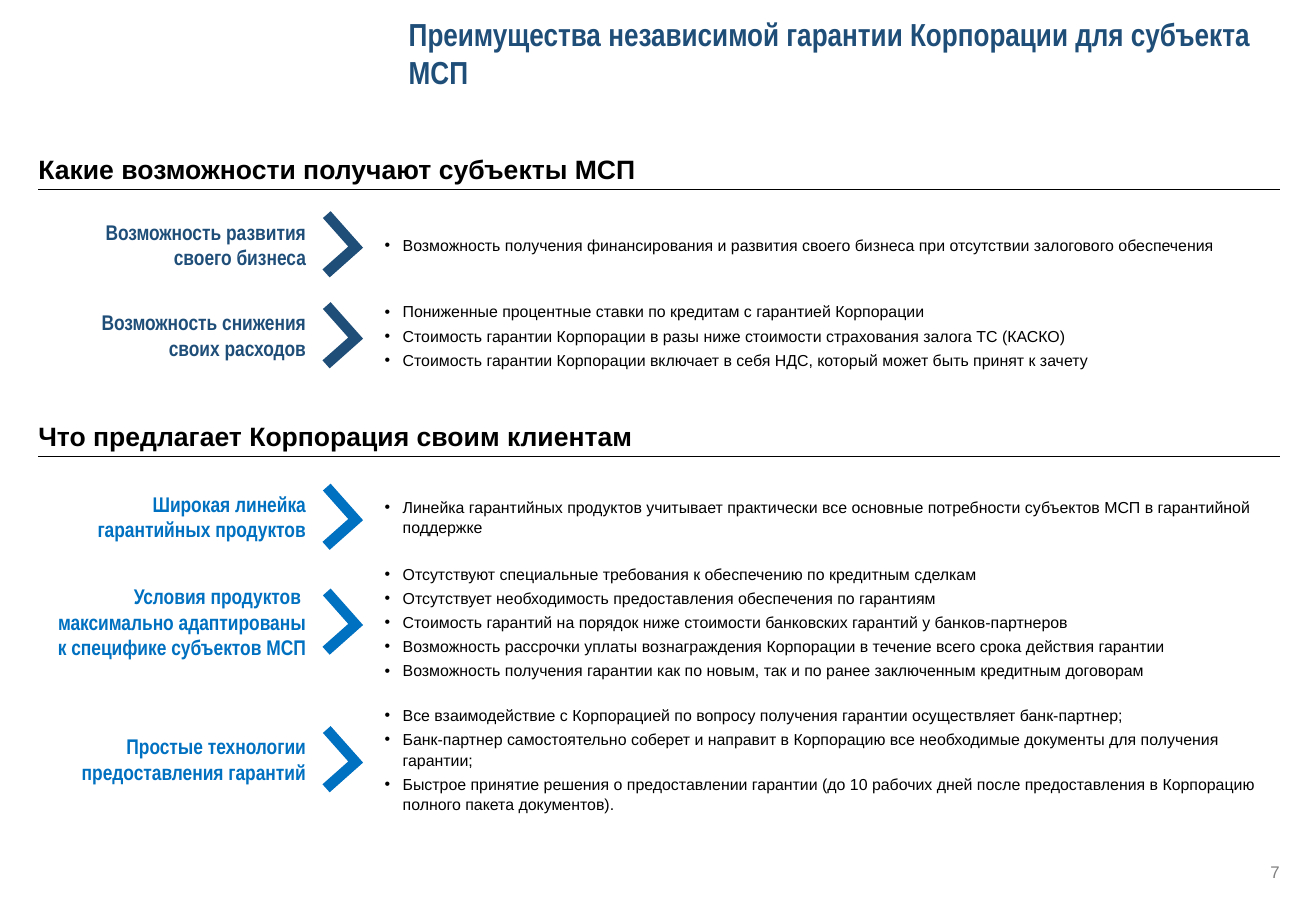
from lxml import etree
from pptx import Presentation
from pptx.dml.color import RGBColor
from pptx.enum.shapes import MSO_CONNECTOR, MSO_SHAPE
from pptx.enum.text import MSO_ANCHOR, MSO_AUTO_SIZE, PP_ALIGN
from pptx.oxml.ns import qn
from pptx.util import Cm, Pt

NAVY = RGBColor(0x1F, 0x4E, 0x79)
BLUE = RGBColor(0x00, 0x70, 0xC0)
BLACK = RGBColor(0, 0, 0)
GRAY = RGBColor(0x80, 0x80, 0x80)

TITLE = "Преимущества независимой гарантии Корпорации для субъекта МСП"
PAGE_NUMBER = "7"

# Section: heading, rule height in cm, colour, rows.
# Row: centre in cm, bullet box height in cm, label paragraphs, bullets.
SECTIONS = [
    ("Какие возможности получают субъекты МСП", 5.05, NAVY, [
        (6.5, 1.88, ["Возможность развития своего бизнеса"], [
            "Возможность получения финансирования и развития своего бизнеса при отсутствии залогового обеспечения",
        ]),
        (8.92, 1.88, ["Возможность снижения своих расходов"], [
            "Пониженные процентные ставки по кредитам с гарантией Корпорации",
            "Стоимость гарантии Корпорации в разы ниже стоимости страхования залога ТС (КАСКО)",
            "Стоимость гарантии Корпорации включает в себя НДС, который может быть принят к зачету",
        ]),
    ]),
    ("Что предлагает Корпорация своим клиентам", 12.14, BLUE, [
        (13.75, 1.88, ["Широкая линейка гарантийных продуктов"], [
            "Линейка гарантийных продуктов учитывает практически все основные потребности субъектов МСП в гарантийной поддержке",
        ]),
        (16.54, 3.25, ["Условия продуктов ", "максимально адаптированы к специфике субъектов МСП"], [
            "Отсутствуют специальные требования к обеспечению по кредитным сделкам",
            "Отсутствует необходимость предоставления обеспечения по гарантиям",
            "Стоимость гарантий на порядок ниже стоимости банковских гарантий у банков-партнеров",
            "Возможность рассрочки уплаты вознаграждения Корпорации в течение всего срока действия гарантии",
            "Возможность получения гарантии как по новым, так и по ранее заключенным кредитным договорам",
        ]),
        (20.2, 3.02, ["Простые технологии предоставления гарантий"], [
            "Все взаимодействие с Корпорацией по вопросу получения гарантии осуществляет банк-партнер;",
            "Банк-партнер самостоятельно соберет и направит в Корпорацию все необходимые документы для получения гарантии;",
            "Быстрое принятие решения о предоставлении гарантии (до 10 рабочих дней после предоставления в Корпорацию полного пакета документов).",
        ]),
    ]),
]

LEFT, RIGHT = 1.02, 34.04
LABEL_WIDTH, LABEL_HEIGHT = 7.37, 3.07
CHEVRON_CENTRE, CHEVRON_WIDTH, CHEVRON_HEIGHT = 8.78, 1.3, 1.19
BULLETS_LEFT, BULLET_INDENT = 10.03, 0.48
HEADING_HEIGHT, HEADING_GAP = 2.0, 0.13

TITLE_FONT = {"name": "Arial Narrow", "size": Pt(24), "bold": True}
LABEL_FONT = {"name": "Arial Narrow", "size": Pt(16), "bold": True}
HEADING_FONT = {"name": "Arial", "size": Pt(20), "bold": True}
BULLET_FONT = {"name": "Arial", "size": Pt(12)}
NUMBER_FONT = {"name": "Arial", "size": Pt(12.7)}


def add_bullet(paragraph):
    properties = paragraph._p.get_or_add_pPr()
    properties.set("marL", str(Cm(BULLET_INDENT)))
    properties.set("indent", str(-Cm(BULLET_INDENT)))
    etree.SubElement(properties, qn("a:buFont")).set("typeface", "Arial")
    etree.SubElement(properties, qn("a:buChar")).set("char", "•")


def write(shape, texts, font, color, anchor=MSO_ANCHOR.MIDDLE,
          align=PP_ALIGN.LEFT, margins=(0.25, 0.13, 0.25, 0.13), bullets=False):
    frame = shape.text_frame
    frame.word_wrap = True
    frame.auto_size = MSO_AUTO_SIZE.NONE
    frame.vertical_anchor = anchor
    for side, margin in zip(("left", "top", "right", "bottom"), margins):
        setattr(frame, f"margin_{side}", Cm(margin))
    for index, text in enumerate(texts):
        paragraph = frame.add_paragraph() if index else frame.paragraphs[0]
        paragraph.alignment = align
        if bullets:
            paragraph.line_spacing = 1.06
            paragraph.space_before = Pt(3 if index else 0)
            add_bullet(paragraph)
        run = paragraph.add_run()
        run.text = text
        for name, value in font.items():
            setattr(run.font, name, value)
        run.font.color.rgb = color


def add_text(slide, left, top, width, height, *content, **layout):
    box = slide.shapes.add_textbox(Cm(left), Cm(top), Cm(width), Cm(height))
    write(box, *content, **layout)


def add_heading(slide, text, rule_y):
    add_text(slide, LEFT, rule_y - HEADING_GAP - HEADING_HEIGHT, RIGHT - LEFT,
             HEADING_HEIGHT, [text], HEADING_FONT, BLACK,
             anchor=MSO_ANCHOR.BOTTOM, margins=(0, 0, 0, 0))
    rule = slide.shapes.add_connector(
        MSO_CONNECTOR.STRAIGHT, Cm(LEFT), Cm(rule_y), Cm(RIGHT), Cm(rule_y))
    rule.line.color.rgb = BLACK
    rule.line.width = Pt(0.75)
    etree.SubElement(rule._element.spPr, qn("a:effectLst"))


def add_chevron(slide, centre, color):
    chevron = slide.shapes.add_shape(
        MSO_SHAPE.CORNER, Cm(CHEVRON_CENTRE - CHEVRON_WIDTH / 2),
        Cm(centre - CHEVRON_HEIGHT / 2), Cm(CHEVRON_WIDTH), Cm(CHEVRON_HEIGHT))
    chevron.adjustments[0] = 0.23
    chevron.adjustments[1] = 0.24
    chevron.rotation = 228.4
    chevron.shadow.inherit = False
    chevron.fill.solid()
    chevron.fill.fore_color.rgb = color
    chevron.line.fill.background()


def add_row(slide, centre, height, label, bullets, color):
    add_text(slide, LEFT, centre - LABEL_HEIGHT / 2, LABEL_WIDTH, LABEL_HEIGHT,
             label, LABEL_FONT, color, align=PP_ALIGN.RIGHT)
    add_chevron(slide, centre, color)
    add_text(slide, BULLETS_LEFT, centre - height / 2, RIGHT - BULLETS_LEFT, height,
             bullets, BULLET_FONT, BLACK, margins=(0.2, 0, 0.1, 0), bullets=True)


def main():
    presentation = Presentation()
    presentation.slide_width, presentation.slide_height = Cm(35), Cm(24)
    slide = presentation.slides.add_slide(presentation.slide_layouts[5])

    title = slide.shapes.title
    title.left, title.top, title.width, title.height = Cm(10.62), Cm(0.43), Cm(23.42), Cm(1.93)
    write(title, [TITLE], TITLE_FONT, NAVY)

    for heading, rule_y, color, rows in SECTIONS:
        add_heading(slide, heading, rule_y)
        for row in rows:
            add_row(slide, *row, color)

    add_text(slide, RIGHT - 1.07, 22.94, 1.07, 0.51, [PAGE_NUMBER], NUMBER_FONT, GRAY,
             anchor=MSO_ANCHOR.TOP, align=PP_ALIGN.RIGHT, margins=(0, 0, 0, 0))
    presentation.save("out.pptx")


if __name__ == "__main__":
    main()
